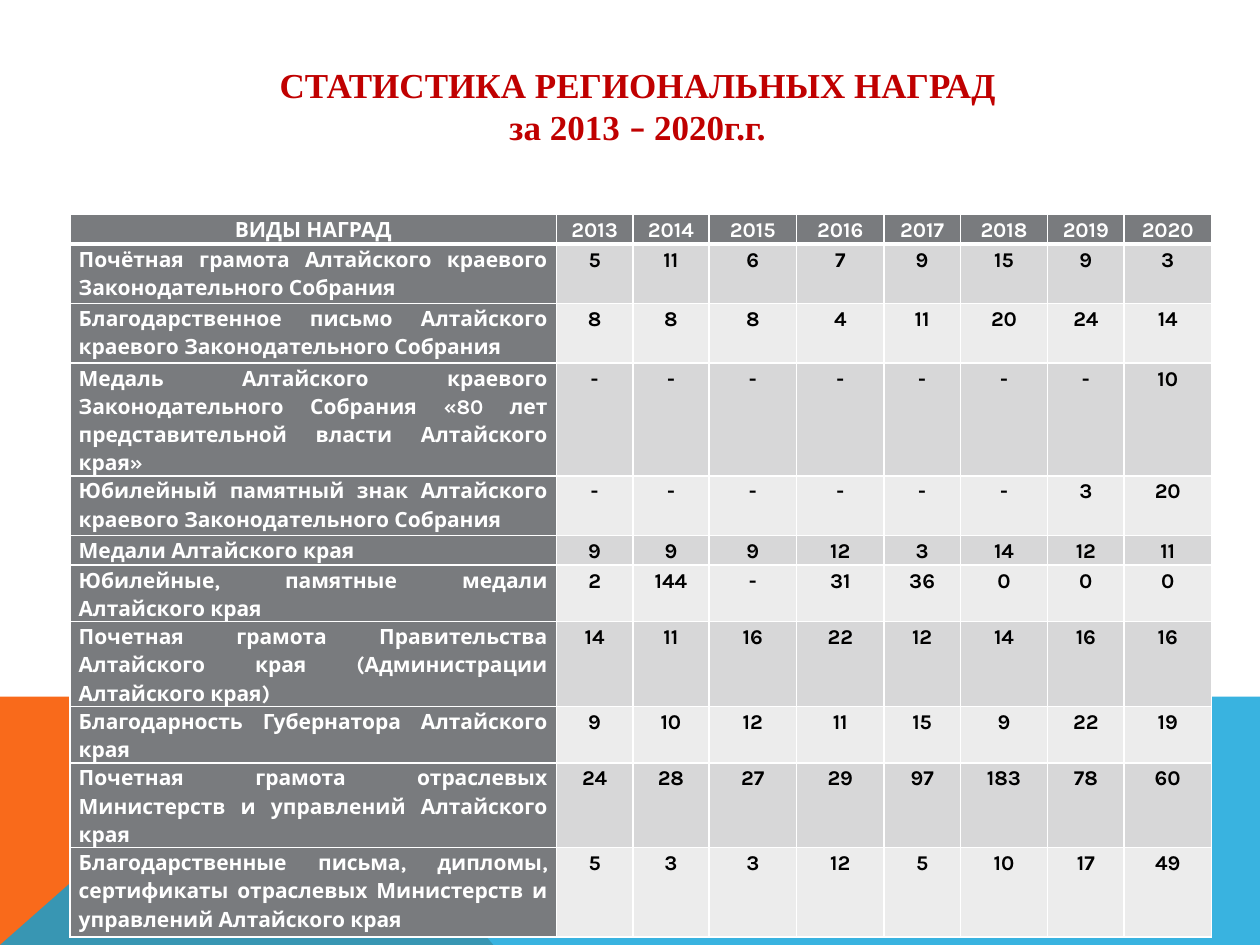
from dataclasses import dataclass
from typing import NamedTuple, Optional

from lxml.etree import SubElement
from pptx import Presentation
from pptx.dml.color import RGBColor
from pptx.enum.text import MSO_ANCHOR, PP_ALIGN
from pptx.oxml.ns import qn
from pptx.util import Pt


@dataclass(frozen=True)
class Theme:
    orange: str = "F96A1B"
    blue: str = "08A1D9"
    blue_opacity: int = 80
    title_red: str = "C00000"
    label_gray: str = "797B7E"
    odd_band: str = "D7D7D8"
    even_band: str = "ECECEC"
    white: str = "FFFFFF"
    black: str = "000000"
    title_font: str = "Times New Roman"
    dash_font: str = "Calibri"
    table_font: str = "Karla"
    title_size: float = 20
    table_size: float = 12
    thin_border: float = 1
    header_border: float = 3


class Corner(NamedTuple):
    outline: list[tuple[float, float]]
    color: str
    opacity: Optional[int] = None


class Award(NamedTuple):
    name: str
    height: float
    counts: str


class CellStyle(NamedTuple):
    fill: str
    color: str
    align: PP_ALIGN
    top: float
    bottom: float


THEME = Theme()
SLIDE_W, SLIDE_H = 720, 540
YEARS = [str(year) for year in range(2013, 2021)]
NAME_WIDTH, NARROW, WIDE = 278, 43.6, 50
COLUMN_WIDTHS = [NAME_WIDTH, NARROW, NARROW, WIDE, WIDE, NARROW, WIDE, NARROW, WIDE]
ONE_LINE, TWO_LINES, THREE_LINES = 17, 34, 51

CORNERS = [
    Corner([(0, 540), (0, 397.6), (160.6, 397.6), (281.5, 540)], THEME.orange),
    Corner([(0, 540), (160.6, 397.6), (720, 398), (720, 540)],
           THEME.blue, THEME.blue_opacity),
]

AWARDS = [
    Award("Почётная грамота Алтайского краевого Законодательного Собрания",
          TWO_LINES, "5 11 6 7 9 15 9 3"),
    Award("Благодарственное письмо Алтайского краевого Законодательного Собрания",
          TWO_LINES, "8 8 8 4 11 20 24 14"),
    Award("Медаль Алтайского краевого Законодательного Собрания "
          "«80 лет представительной власти Алтайского края»",
          TWO_LINES, "- - - - - - - 10"),
    Award("Юбилейный памятный знак Алтайского краевого Законодательного Собрания",
          TWO_LINES, "- - - - - - 3 20"),
    Award("Медали Алтайского края", ONE_LINE, "9 9 9 12 3 14 12 11"),
    Award("Юбилейные, памятные медали Алтайского края",
          24.5, "2 144 - 31 36 0 0 0"),
    Award("Почетная грамота Правительства Алтайского края "
          "(Администрации Алтайского края)",
          TWO_LINES, "14 11 16 22 12 14 16 16"),
    Award("Благодарность Губернатора Алтайского края",
          ONE_LINE, "9 10 12 11 15 9 22 19"),
    Award("Почетная грамота отраслевых Министерств и управлений Алтайского края",
          TWO_LINES, "24 28 27 29 97 183 78 60"),
    Award("Благодарственные письма, дипломы, сертификаты отраслевых "
          "Министерств и управлений Алтайского края",
          THREE_LINES, "5 3 3 12 5 10 17 49"),
]


def rgb(color: str) -> RGBColor:
    return RGBColor.from_string(color)


def draw_corner(slide, corner: Corner) -> None:
    start, *rest = corner.outline
    builder = slide.shapes.build_freeform(*start, scale=Pt(1))
    builder.add_line_segments(rest, close=True)
    shape = builder.convert_to_shape()
    shape.shadow.inherit = False
    shape.line.fill.background()
    shape.fill.solid()
    shape.fill.fore_color.rgb = rgb(corner.color)
    if corner.opacity is not None:
        color_element = shape.element.spPr.find(qn("a:solidFill"))[0]
        SubElement(color_element, qn("a:alpha"), val=str(corner.opacity * 1000))


def draw_borders(cell, top: float, bottom: float) -> None:
    properties = cell._tc.get_or_add_tcPr()
    thin = THEME.thin_border
    widths = {"a:lnL": thin, "a:lnR": thin, "a:lnT": top, "a:lnB": bottom}
    for position, (side, width) in enumerate(widths.items()):
        border = SubElement(properties, qn(side), w=str(Pt(width)))
        fill = SubElement(border, qn("a:solidFill"))
        SubElement(fill, qn("a:srgbClr"), val=THEME.white)
        properties.insert(position, border)


def fill_cell(cell, text: str, style: CellStyle) -> None:
    cell.margin_left = cell.margin_right = Pt(5)
    cell.margin_top = cell.margin_bottom = Pt(0)
    cell.fill.solid()
    cell.fill.fore_color.rgb = rgb(style.fill)
    draw_borders(cell, style.top, style.bottom)
    paragraph = cell.text_frame.paragraphs[0]
    paragraph.text = text
    paragraph.alignment = style.align
    paragraph.line_spacing = 1.15
    paragraph.font.name = THEME.table_font
    paragraph.font.size = Pt(THEME.table_size)
    paragraph.font.bold = True
    paragraph.font.color.rgb = rgb(style.color)


def draw_awards(slide) -> None:
    frame = slide.shapes.add_table(len(AWARDS) + 1, len(COLUMN_WIDTHS), Pt(40),
                                   Pt(122.5), Pt(sum(COLUMN_WIDTHS)), Pt(345.6))
    table = frame.table
    for column, width in zip(table.columns, COLUMN_WIDTHS):
        column.width = Pt(width)
    thin, thick = THEME.thin_border, THEME.header_border

    # Header row
    table.rows[0].height = Pt(ONE_LINE)
    header = CellStyle(THEME.label_gray, THEME.white, PP_ALIGN.CENTER, thin, thick)
    for index, heading in enumerate(["ВИДЫ НАГРАД", *YEARS]):
        fill_cell(table.cell(0, index), heading, header)

    # One row per award
    for row, award in enumerate(AWARDS, start=1):
        table.rows[row].height = Pt(award.height)
        top = thick if row == 1 else thin
        band = THEME.odd_band if row % 2 else THEME.even_band
        label = CellStyle(THEME.label_gray, THEME.white, PP_ALIGN.JUSTIFY, top, thin)
        value = CellStyle(band, THEME.black, PP_ALIGN.CENTER, top, thin)
        fill_cell(table.cell(row, 0), award.name, label)
        for index, count in enumerate(award.counts.split(), start=1):
            fill_cell(table.cell(row, index), count, value)
    frame.height = Pt(345.6)


def draw_title(slide) -> None:
    title = slide.shapes.add_textbox(Pt(40), Pt(31.7), Pt(648.7), Pt(77.8))
    frame = title.text_frame
    frame.word_wrap = True
    frame.vertical_anchor = MSO_ANCHOR.MIDDLE
    frame.margin_bottom = Pt(24.5)
    heading, period = frame.paragraphs[0], frame.add_paragraph()
    heading.text = "СТАТИСТИКА РЕГИОНАЛЬНЫХ НАГРАД"
    heading.font.name = THEME.title_font
    for text, font in [("за 2013 ", THEME.title_font), ("– ", THEME.dash_font),
                       ("2020г.г.", THEME.title_font)]:
        part = period.add_run()
        part.text = text
        part.font.name = font
    for line in (heading, period):
        line.alignment = PP_ALIGN.CENTER
        line.font.size = Pt(THEME.title_size)
        line.font.bold = True
        line.font.color.rgb = rgb(THEME.title_red)


def main() -> None:
    presentation = Presentation()
    presentation.slide_width, presentation.slide_height = Pt(SLIDE_W), Pt(SLIDE_H)
    slide = presentation.slides.add_slide(presentation.slide_layouts[6])
    for corner in CORNERS:
        draw_corner(slide, corner)
    draw_awards(slide)
    draw_title(slide)
    presentation.save("out.pptx")


if __name__ == "__main__":
    main()
